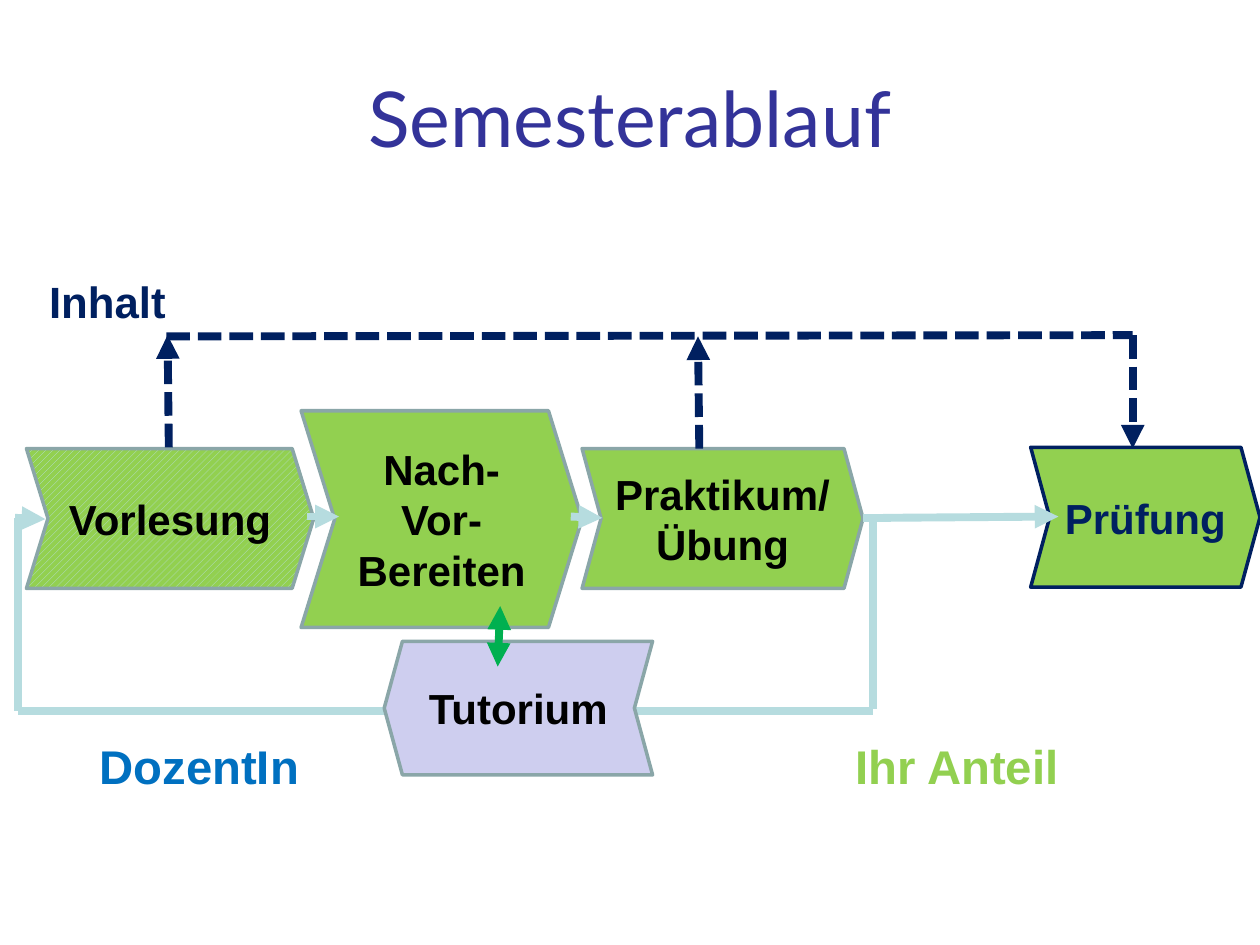
from lxml import etree
from pptx import Presentation
from pptx.dml.color import RGBColor
from pptx.enum.dml import MSO_LINE, MSO_PATTERN
from pptx.enum.shapes import MSO_CONNECTOR, MSO_SHAPE
from pptx.enum.text import MSO_ANCHOR, PP_ALIGN
from pptx.oxml.ns import qn
from pptx.util import Inches, Pt

STRAIGHT = MSO_CONNECTOR.STRAIGHT
CHEVRON = MSO_SHAPE.CHEVRON
MIDDLE = MSO_ANCHOR.MIDDLE
LEFT, CENTER = PP_ALIGN.LEFT, PP_ALIGN.CENTER
DASH = MSO_LINE.SQUARE_DOT
DIAGONAL = MSO_PATTERN.WIDE_UPWARD_DIAGONAL

BLACK = RGBColor(0x00, 0x00, 0x00)
INDIGO = RGBColor(0x33, 0x33, 0x99)
NAVY = RGBColor(0x00, 0x20, 0x60)
BLUE = RGBColor(0x00, 0x70, 0xC0)
LIME = RGBColor(0x92, 0xD0, 0x50)
GREEN = RGBColor(0x00, 0xB0, 0x50)
LAVENDER = RGBColor(0xCE, 0xCE, 0xEF)
GRAY = RGBColor(0x8A, 0xA6, 0xA8)
AQUA = RGBColor(0xB6, 0xDC, 0xDF)
PALE_AQUA = RGBColor(0xBB, 0xE0, 0xE3)


def write_text(shape, text, size=24, color=BLACK, font="Arial", bold=True, align=CENTER):
    """Fill a shape with formatted text, one paragraph per line."""
    frame = shape.text_frame
    frame.word_wrap = True
    frame.vertical_anchor = MIDDLE
    frame.margin_left = frame.margin_right = 0
    frame.text = text
    for paragraph in frame.paragraphs:
        paragraph.alignment = align
        paragraph.font.size = Pt(size)
        paragraph.font.name = font
        paragraph.font.bold = bold
        paragraph.font.color.rgb = color


class SemesterSlide:
    """Draw the elements of the semester flow in one shared style."""

    def __init__(self, slide):
        self.slide = slide
        self.outline_width = Pt(2)
        self.flow_width = Pt(4.5)

    def label(self, text, left, top, width, height, **text_format):
        box = self.slide.shapes.add_textbox(
            Inches(left), Inches(top), Inches(width), Inches(height))
        write_text(box, text, **text_format)

    def stage(self, text, left, top, width, height, point=0.136, fill=LIME,
              outline=GRAY, color=BLACK, hatched=False, flipped=False):
        shape = self.slide.shapes.add_shape(
            CHEVRON, Inches(left), Inches(top), Inches(width), Inches(height))
        shape.shadow.inherit = False
        shape.adjustments[0] = point
        if hatched:
            shape.fill.patterned()
            shape.fill.pattern = DIAGONAL
            shape.fill.fore_color.rgb = PALE_AQUA
            shape.fill.back_color.rgb = fill
        else:
            shape.fill.solid()
            shape.fill.fore_color.rgb = fill
        shape.line.color.rgb = outline
        shape.line.width = self.outline_width
        if flipped:
            shape._element.spPr.find(qn("a:xfrm")).set("flipH", "1")
        write_text(shape, text, color=color)

    def flow(self, start, end, color=AQUA, dashed=False, ends=()):
        connector = self.slide.shapes.add_connector(
            STRAIGHT, *(Inches(value) for value in (*start, *end)))
        connector.line.color.rgb = color
        connector.line.width = self.flow_width
        if dashed:
            connector.line.dash_style = DASH
        properties = connector._element.spPr
        line = properties.find(qn("a:ln"))
        for name in ends:
            etree.SubElement(line, qn(f"a:{name}")).set("type", "triangle")
        etree.SubElement(properties, qn("a:effectLst"))


def main():
    presentation = Presentation()
    presentation.slide_width = Inches(10)
    presentation.slide_height = Inches(7.5)
    semester = SemesterSlide(presentation.slides.add_slide(presentation.slide_layouts[6]))
    arrow = ("tailEnd",)

    semester.label("Semesterablauf", 0, 0.3, 10, 1.25,
                   size=44, color=INDIGO, font="Lato", bold=False)
    semester.label("DozentIn", 0.79, 5.8, 2.2, 0.55, size=27, color=BLUE, align=LEFT)
    semester.label("Ihr Anteil", 6.79, 5.8, 2.2, 0.55, size=27, color=LIME, align=LEFT)

    semester.stage("Vorlesung", 0.21, 3.56, 2.28, 1.11, point=0.154, hatched=True)
    semester.stage("Praktikum/ Übung", 4.62, 3.56, 2.23, 1.11)
    semester.stage("Nach-\nVor-\nBereiten", 2.39, 3.26, 2.23, 1.72, point=0.155)
    semester.stage("Prüfung", 8.18, 3.55, 1.82, 1.11, outline=NAVY, color=NAVY)

    for start, end in (((6.85, 4.11), (7.07, 4.11)), ((6.93, 4.11), (6.93, 5.63)),
                       ((0.14, 5.64), (6.93, 5.64)), ((0.14, 4.11), (0.14, 5.64))):
        semester.flow(start, end)
    for start, end in (((0.12, 4.11), (0.36, 4.12)), ((2.44, 4.1), (2.69, 4.1)),
                       ((4.53, 4.1), (4.78, 4.11)), ((7.01, 4.11), (8.4, 4.1))):
        semester.flow(start, end, ends=arrow)

    semester.flow((1.32, 2.67), (8.99, 2.66), color=NAVY, dashed=True)
    for start, end in (((8.99, 2.66), (8.99, 3.56)), ((5.55, 3.56), (5.54, 2.67)),
                       ((1.34, 3.55), (1.33, 2.66))):
        semester.flow(start, end, color=NAVY, dashed=True, ends=arrow)

    semester.stage("Tutorium", 3.05, 5.09, 2.13, 1.06, fill=LAVENDER, flipped=True)
    semester.flow((3.97, 4.81), (3.95, 5.29), color=GREEN, ends=("headEnd", "tailEnd"))
    semester.label("Inhalt", 0.39, 2.14, 2, 0.5, size=25, color=NAVY, align=LEFT)

    presentation.save("out.pptx")


if __name__ == "__main__":
    main()
